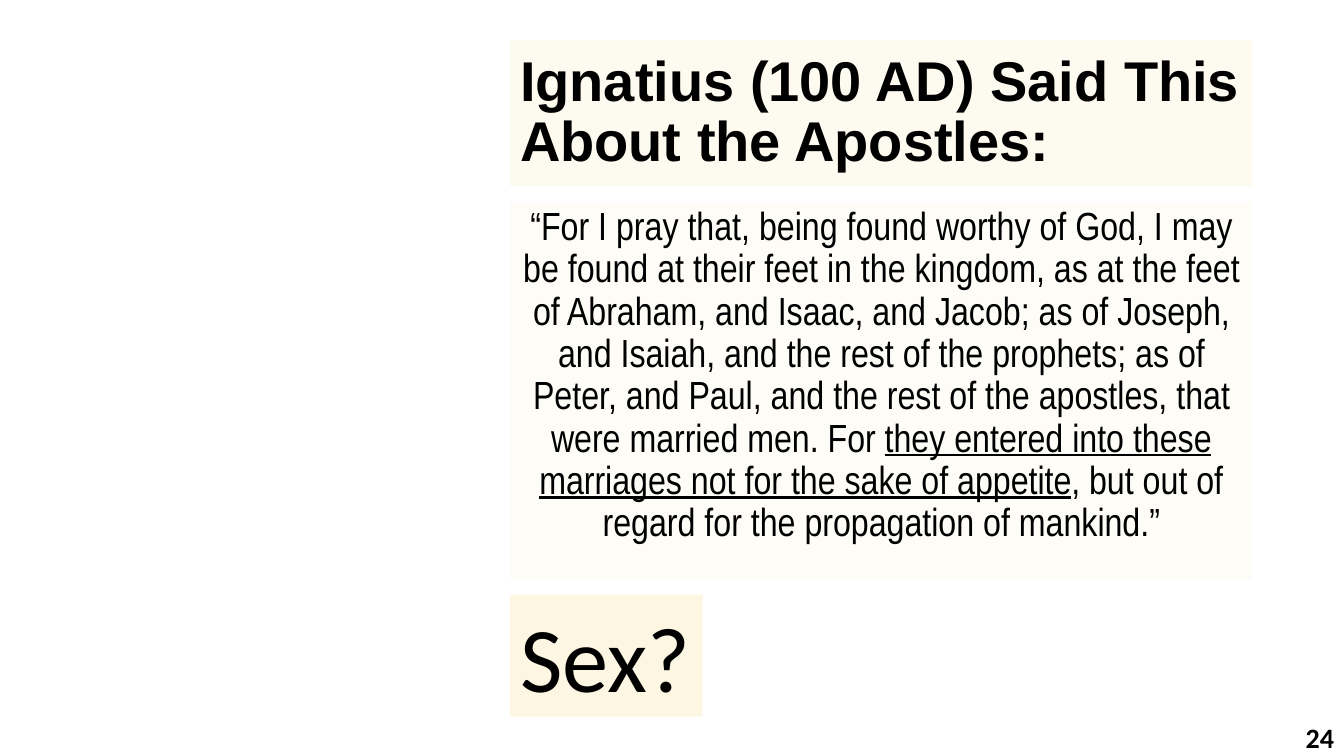
from lxml import etree
from pptx import Presentation
from pptx.dml.color import RGBColor
from pptx.enum.text import MSO_ANCHOR, PP_ALIGN
from pptx.oxml.ns import qn
from pptx.util import Inches, Pt

LEFT, MID, RIGHT = PP_ALIGN.LEFT, PP_ALIGN.CENTER, PP_ALIGN.RIGHT
TOP, CENTRE = MSO_ANCHOR.TOP, MSO_ANCHOR.MIDDLE
COLORS = {"cream": "FDF6E3", "ink": "000000", "page": "FFFFFF"}
WIDE, HIGH = 13.33, 7.5
CELL = 0.05
EDGE, SPAN, GAP = 101.2, 147.2, 3

TITLE = [("Ignatius (100 AD) Said This About the Apostles:", False)]
QUOTE = [
    ("“For I pray that, being found worthy of God, I may be found at their "
     "feet in the kingdom, as at the feet of Abraham, and Isaac, and Jacob; "
     "as of Joseph, and Isaiah, and the rest of the prophets; as of Peter, "
     "and Paul, and the rest of the apostles, that were married men. For ",
     False),
    ("they entered into these marriages not for the sake of appetite", True),
    (", but out of regard for the propagation of mankind.”", False),
]


def grid(count):
    """Turn a count of grid cells into a length."""
    return Inches(count * CELL)


def add_box(slide, col, row, cols, rows, anchor=TOP, wrap=True):
    """Add an empty text box on the grid."""
    box = slide.shapes.add_textbox(*map(grid, (col, row, cols, rows)))
    box.text_frame.word_wrap = wrap
    box.text_frame.vertical_anchor = anchor
    return box


def tint(box, share):
    """Fill a box with cream at a given percentage of opacity."""
    box.fill.solid()
    box.fill.fore_color.rgb = RGBColor.from_string(COLORS["cream"])
    if share < 100:
        color = box.fill._xPr.find(qn("a:solidFill"))[0]
        etree.SubElement(color, qn("a:alpha")).set("val", str(share * 1000))


def write(box, runs, size, font, align=LEFT, bold=False, line=1.0):
    """Write one paragraph, run by run, with underlines where marked."""
    para = box.text_frame.paragraphs[0]
    para.alignment = align
    para.line_spacing = line
    for words, under in runs:
        run = para.add_run()
        run.text = words
        run.font.size = Pt(size)
        run.font.name = font
        run.font.bold = bold
        run.font.underline = under
        run.font.color.rgb = RGBColor.from_string(COLORS["ink"])


def main():
    """Build the slide and save it."""
    deck = Presentation()
    deck.slide_width, deck.slide_height = Inches(WIDE), Inches(HIGH)
    slide = deck.slides.add_slide(deck.slide_layouts[6])
    slide.background.fill.solid()
    slide.background.fill.fore_color.rgb = RGBColor.from_string(COLORS["page"])

    row, tall = 8, 29
    title = add_box(slide, EDGE, row, SPAN, tall, CENTRE)
    tint(title, 50)
    write(title, TITLE, 40, "Arial", bold=True, line=0.9)

    row, tall = row + tall + GAP, 75
    quote = add_box(slide, EDGE, row, SPAN, tall)
    tint(quote, 30)
    write(quote, QUOTE, 28, "Arial Narrow", MID, line=0.9)

    number = add_box(slide, WIDE / CELL - 60, 142.2, 60, 8, CENTRE)
    write(number, [("24", False)], 20, "Calibri", RIGHT, bold=True)

    row += tall + GAP
    topic = add_box(slide, EDGE, row, 38.2, 24.2, wrap=False)
    tint(topic, 100)
    write(topic, [("Sex?", False)], 66, "Calibri")

    deck.save("out.pptx")


if __name__ == "__main__":
    main()
